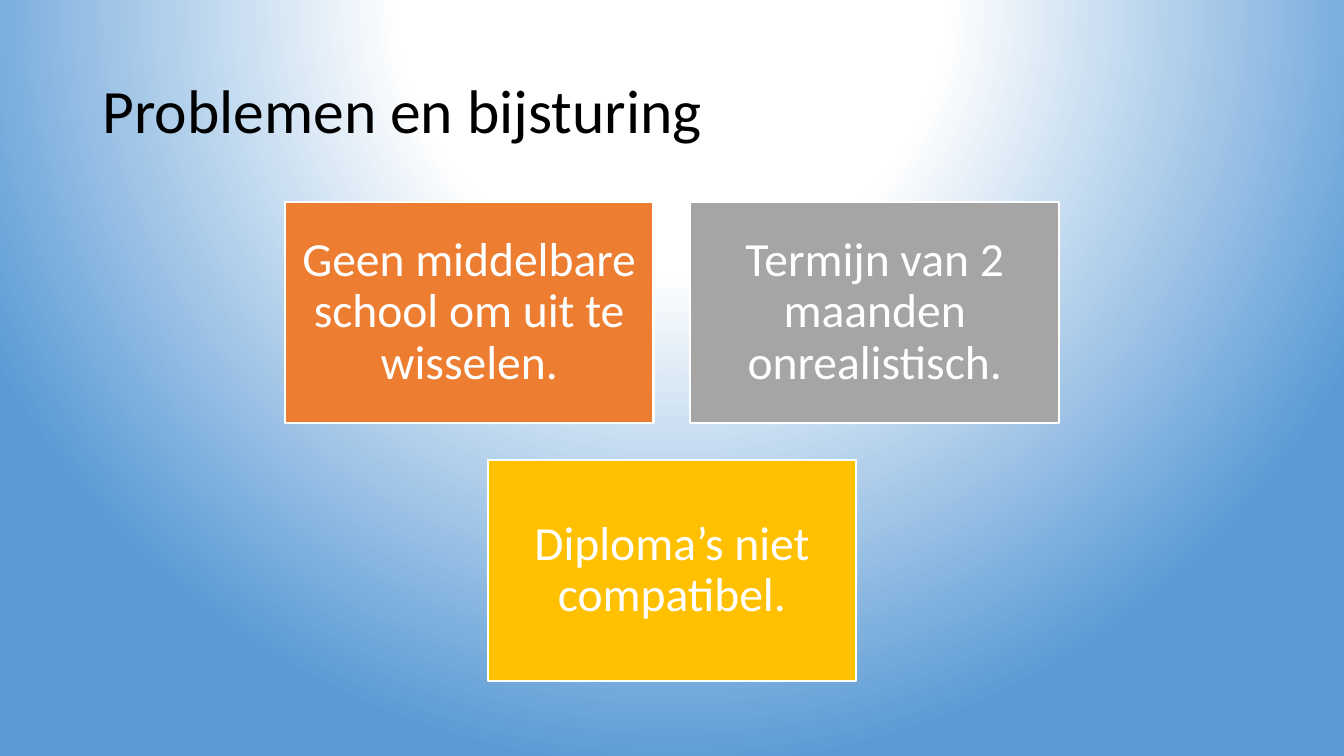
import pptx
import pptx.dml.color
import pptx.enum.shapes
import pptx.enum.text
import pptx.oxml
import pptx.oxml.ns
import pptx.util

Cm = pptx.util.Cm
COLORS = {
    "white": "FFFFFF",
    "black": "000000",
    "blue": "5B9BD5",
    "orange": "ED7D31",
    "gray": "A5A5A5",
    "gold": "FFC000",
}
SLIDE_WIDTH, SLIDE_HEIGHT = 33.87, 19.05
CARD_WIDTH, CARD_HEIGHT, CARD_GAP = 9.29, 5.57, 0.93
CARDS_TOP = 5.09
CARD_ROWS = [
    [("Geen middelbare school om uit te wisselen.", "orange"),
     ("Termijn van 2 maanden onrealistisch.", "gray")],
    [("Diploma’s niet compatibel.", "gold")],
]


class SlideBuilder:
    """Holds the style and the current slide."""

    font = "Calibri"
    title_size = 44
    card_size = 34
    line_spacing = 0.9
    card_margin = 0.36

    def __init__(self, page):
        self.page = page

    def color(self, name):
        return pptx.dml.color.RGBColor.from_string(COLORS[name])

    def background(self, stops):
        """Circular gradient that spreads from above the top edge."""
        self.page.background.fill.gradient()
        gradient = self.page.element.xpath("./p:cSld/p:bg/p:bgPr/a:gradFill")[0]
        stop_xml = "".join(
            f'<a:gs pos="{percent * 1000}"><a:srgbClr val="{COLORS[name]}"/></a:gs>'
            for percent, name in stops)
        circle = pptx.oxml.parse_xml(
            f'<a:gradFill {pptx.oxml.ns.nsdecls("a")} rotWithShape="1">'
            f'<a:gsLst>{stop_xml}</a:gsLst><a:path path="circle">'
            '<a:fillToRect l="50000" t="-80000" r="50000" b="180000"/>'
            '</a:path></a:gradFill>')
        gradient.getparent().replace(gradient, circle)

    def add_text(self, box, text, size, color, align):
        frame = box.text_frame
        frame.word_wrap = True
        frame.vertical_anchor = pptx.enum.text.MSO_ANCHOR.MIDDLE
        para = frame.paragraphs[0]
        para.alignment = align
        para.line_spacing = self.line_spacing
        span = para.add_run()
        span.text = text
        span.font.name = self.font
        span.font.size = pptx.util.Pt(size)
        span.font.color.rgb = self.color(color)

    def title(self, text, left, top, width, height):
        box = self.page.shapes.title
        box.left, box.top = Cm(left), Cm(top)
        box.width, box.height = Cm(width), Cm(height)
        self.add_text(box, text, self.title_size, "black",
                      pptx.enum.text.PP_ALIGN.LEFT)

    def card(self, text, fill, left, top):
        box = self.page.shapes.add_shape(
            pptx.enum.shapes.MSO_SHAPE.RECTANGLE,
            Cm(left), Cm(top), Cm(CARD_WIDTH), Cm(CARD_HEIGHT))
        box.shadow.inherit = False
        box.fill.solid()
        box.fill.fore_color.rgb = self.color(fill)
        box.line.color.rgb = self.color("white")
        box.line.width = pptx.util.Pt(1.5)
        frame = box.text_frame
        frame.margin_left = frame.margin_right = Cm(self.card_margin)
        frame.margin_top = frame.margin_bottom = Cm(self.card_margin)
        self.add_text(box, text, self.card_size, "white",
                      pptx.enum.text.PP_ALIGN.CENTER)


def main():
    deck = pptx.Presentation()
    deck.slide_width, deck.slide_height = Cm(SLIDE_WIDTH), Cm(SLIDE_HEIGHT)
    title_only = deck.slide_layouts.get_by_name("Title Only")
    builder = SlideBuilder(deck.slides.add_slide(title_only))

    # Background and title
    builder.background([(0, "white"), (35, "white"), (100, "blue")])
    builder.title("Problemen en bijsturing", 2.33, 1.01, 29.21, 3.68)

    # Problem cards, each row centred on the slide
    for row, cards in enumerate(CARD_ROWS):
        row_width = len(cards) * (CARD_WIDTH + CARD_GAP) - CARD_GAP
        row_left = (SLIDE_WIDTH - row_width) / 2
        top = CARDS_TOP + row * (CARD_HEIGHT + CARD_GAP)
        for column, (text, fill) in enumerate(cards):
            left = row_left + column * (CARD_WIDTH + CARD_GAP)
            builder.card(text, fill, left, top)

    deck.save("out.pptx")


if __name__ == "__main__":
    main()
